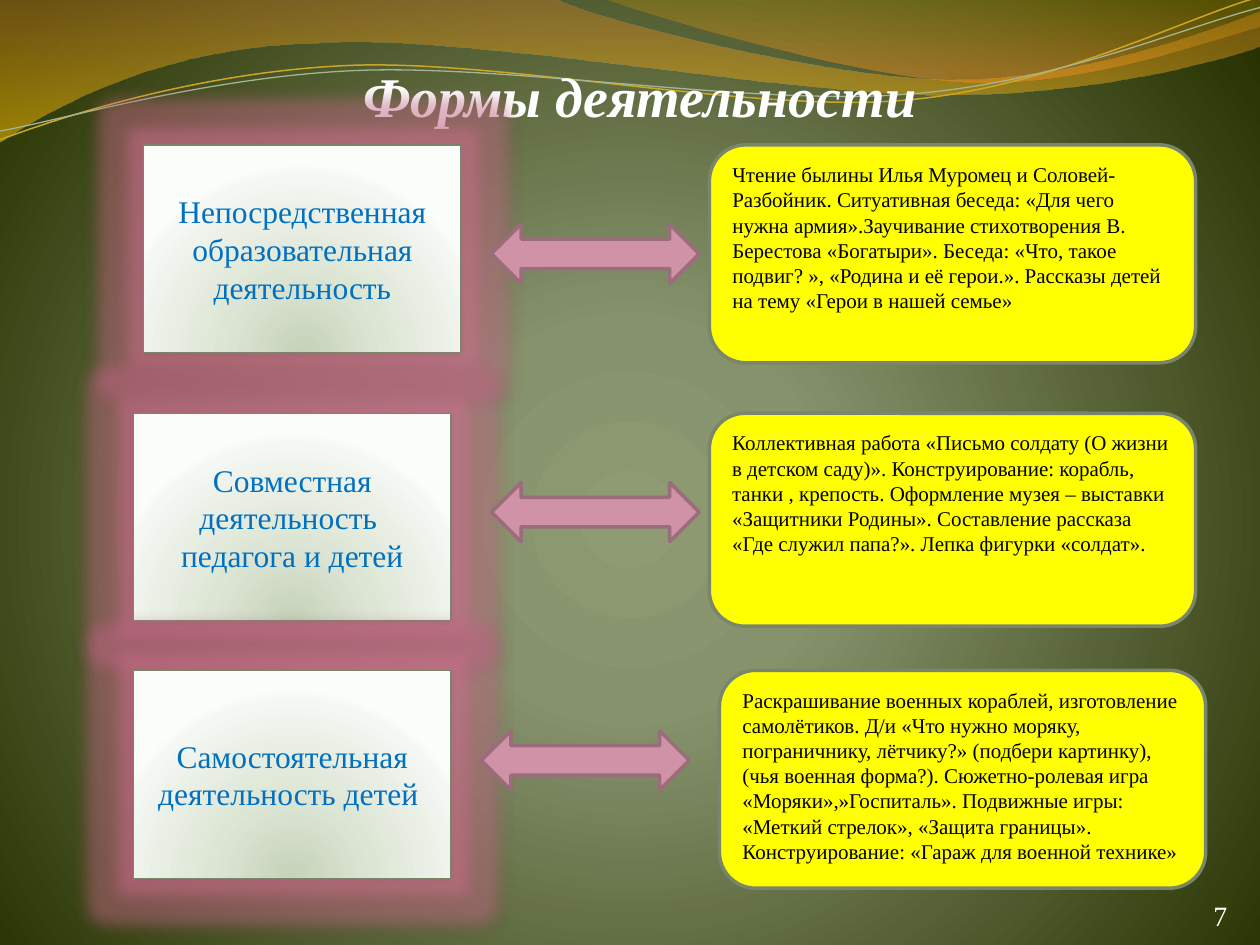
from lxml import etree
from pptx import Presentation
from pptx import util as u
from pptx.dml.color import RGBColor
from pptx.enum import shapes, text
from pptx.oxml import ns

Inches = u.Inches
HUES = {
    "white": "FFFFFF", "black": "000000", "blue": "0070C0",
    "yellow": "FFFF00", "edge": "7A866C", "pink": "D092A7",
    "plum": "9A6C7C", "glow": "E7799E", "gold": "CCA624", "sage": "A5B592",
}
FIELD = [(0, "8F9B72", 100), (25, "86926C", 100), (100, "273200", 100)]
PANEL = [(0, "C6D2B9", 100), (43, "DDE6D5", 100),
         (93, "F4F7F2", 100), (100, "FBFDFA", 100)]
WAVES = [
    ([("L", (0, 0)), ("L", (4.4, -0.01)),
      ("C", (4.76, 0.17), (6.64, 0.63), (7.58, 0.63)),
      ("C", (8.53, 0.63), (9.58, 0.26), (10, 0.09)),
      ("L", (10.01, 0.36)),
      ("C", (9.83, 0.44), (8.7, 0.76), (7.46, 0.75)),
      ("C", (6.22, 0.75), (3.82, 0.28), (2.57, 0.34)),
      ("C", (1.29, 0.36), (0.46, 0.83), (-0.01, 1.13)),
      ("L", (0, 0))],
     [(0, "C07A28", 45), (100, "F7BF00", 55)]),
    ([("L", (4.79, -0.01)),
      ("C", (5.09, 0.11), (6.82, 0.62), (7.69, 0.65)),
      ("C", (8.56, 0.69), (9.61, 0.32), (10, 0.21)),
      ("L", (10, 0)), ("L", (4.79, -0.01))],
     [(0, "C09709", 30), (80, "F59320", 45)]),
]
LINES = [
    ([("L", (0, 1.11)),
      ("C", (0.48, 0.93), (1.58, 0.57), (2.77, 0.52)),
      ("C", (3.95, 0.47), (5.93, 0.89), (7.13, 0.8)),
      ("C", (8.33, 0.71), (9.38, 0.15), (9.98, -0.02))], "gold", 0.85),
    ([("L", (0, 1.04)),
      ("C", (0.47, 0.96), (1.64, 0.61), (2.83, 0.56)),
      ("C", (4.03, 0.51), (5.97, 0.84), (7.17, 0.75)),
      ("C", (8.36, 0.67), (9.41, 0.21), (10, 0.06))], "sage", 0.75),
]
ROWS = [
    ((1.14, 1.15), "Непосредственная образовательная деятельность",
     (5.63, 1.15, 3.86, 1.73),
     "Чтение былины Илья Муромец и Соловей-Разбойник. Ситуативная беседа: "
     "«Для чего нужна армия».Заучивание стихотворения В. Берестова «Богатыри». "
     "Беседа: «Что, такое подвиг? », «Родина и её герои.». "
     "Рассказы детей на тему «Герои в нашей семье»", (3.9, 1.78)),
    ((1.06, 3.28), "Совместная деятельность  педагога и детей",
     (5.63, 3.28, 3.86, 1.69),
     "Коллективная работа «Письмо солдату (О жизни в детском саду)». "
     "Конструирование: корабль, танки , крепость. Оформление музея – выставки "
     "«Защитники Родины». Составление рассказа «Где служил папа?». "
     "Лепка фигурки «солдат».", (3.9, 3.83)),
    ((1.06, 5.32), "Самостоятельная деятельность детей ",
     (5.71, 5.32, 3.86, 1.73),
     "Раскрашивание военных кораблей, изготовление самолётиков. "
     "Д/и «Что нужно моряку, пограничнику, лётчику?» (подбери картинку), "
     "(чья военная форма?). Сюжетно-ролевая игра «Моряки»,»Госпиталь». "
     "Подвижные игры: «Меткий стрелок», «Защита границы». "
     "Конструирование: «Гараж для военной технике»", (3.82, 5.8)),
]


def rgb(name):
    return RGBColor.from_string(HUES[name])


def add_node(base, tag, **attrs):
    node = etree.SubElement(base, ns.qn("a:" + tag))
    for key, val in attrs.items():
        node.set(key, str(val))
    return node


def tint(base, hue, alpha):
    add_node(add_node(base, "srgbClr", val=hue), "alpha", val=alpha * 1000)


def blend(base, fill, stops, focus=None):
    fill.solid()
    old = base.find(ns.qn("a:solidFill"))
    grad = etree.Element(ns.qn("a:gradFill"), rotWithShape="1")
    items = add_node(grad, "gsLst")
    for pos, hue, alpha in stops:
        tint(add_node(items, "gs", pos=pos * 1000), hue, alpha)
    if focus:
        spot = add_node(grad, "path", path="circle")
        add_node(spot, "fillToRect",
                 **{side: val * 1000 for side, val in zip("ltrb", focus)})
    else:
        add_node(grad, "lin", ang=5400000, scaled=1)
    base.replace(old, grad)


def outline(slide, parts, close=False):
    spots = [(Inches(x), Inches(y)) for _, *pts in parts for x, y in pts]
    pen = slide.shapes.build_freeform(*spots[0], scale=1.0)
    pen.add_line_segments(spots[1:], close=close)
    shape = pen.convert_to_shape()
    shape.shadow.inherit = False
    legs = iter(list(shape._element.iter(ns.qn("a:lnTo"))))
    for kind, *_ in parts[1:]:
        leg = next(legs)
        if kind == "C":
            leg.tag = ns.qn("a:cubicBezTo")
            for _ in range(2):
                rest = next(legs)
                leg.append(rest[0])
                rest.getparent().remove(rest)
    return shape


def write(shape, words, size=12, hue="black", bold=False, slant=False,
          align="LEFT", anchor="TOP"):
    frame = shape.text_frame
    frame.word_wrap = True
    frame.vertical_anchor = getattr(text.MSO_ANCHOR, anchor)
    para = frame.paragraphs[0]
    para.alignment = getattr(text.PP_ALIGN, align)
    run = para.add_run()
    run.text = words
    font = run.font
    font.name, font.size = "Times New Roman", u.Pt(size)
    font.bold, font.italic = bold, slant
    font.color.rgb = rgb(hue)


def add_form(slide, kind, box, fill, line, width):
    shape = slide.shapes.add_shape(kind, *map(Inches, box))
    shape.shadow.inherit = False
    if fill:
        shape.fill.solid()
        shape.fill.fore_color.rgb = rgb(fill)
    shape.line.color.rgb = rgb(line)
    shape.line.width = u.Pt(width)
    return shape


def add_label(slide, box, words):
    shape = add_form(slide, shapes.MSO_SHAPE.RECTANGLE, box, None, "edge", 0.75)
    props = shape._element.spPr
    blend(props, shape.fill, PANEL, (50, 130, 50, -30))
    fx = props.find(ns.qn("a:effectLst"))
    tint(add_node(fx, "glow", rad=Inches(0.25)), HUES["glow"], 40)
    tint(add_node(fx, "outerShdw", blurRad=u.Pt(3.1), dist=u.Pt(1.6),
                  dir=5400000, rotWithShape=0), HUES["black"], 38)
    write(shape, words, size=18, hue="blue", align="CENTER", anchor="MIDDLE")


def add_note(slide, box, words):
    kind = shapes.MSO_SHAPE.ROUNDED_RECTANGLE
    write(add_form(slide, kind, box, "yellow", "edge", 2), words)


def add_arrow(slide, box):
    kind = shapes.MSO_SHAPE.LEFT_RIGHT_ARROW
    add_form(slide, kind, box, "pink", "plum", 2)


def add_scene(slide):
    fill = slide.background.fill
    fill.solid()
    base = next(slide._element.iter(ns.qn("p:bgPr")))
    blend(base, fill, FIELD, (10, 110, 10, 100))
    for parts, stops in WAVES:
        wave = outline(slide, parts, True)
        blend(wave._element.spPr, wave.fill, stops)
        wave.line.fill.background()
    for parts, hue, width in LINES:
        curve = outline(slide, parts)
        curve.fill.background()
        curve.line.color.rgb = rgb(hue)
        curve.line.width = u.Pt(width)


def add_words(slide, box, words, **style):
    label = slide.shapes.add_textbox(*map(Inches, box))
    write(label, words, hue="white", align="CENTER", **style)
    return label.text_frame


def main():
    deck = Presentation()
    deck.slide_width, deck.slide_height = Inches(10), Inches(7.5)
    slide = deck.slides.add_slide(deck.slide_layouts[6])
    add_scene(slide)
    title = add_words(slide, (0.83, 0.44, 8.59, 0.71), "Формы деятельности",
                      size=32, bold=True, slant=True)
    title.margin_left, title.margin_right = 0, Inches(0.09)
    for spot, name, *_ in ROWS:
        add_label(slide, (*spot, 2.52, 1.65), name)
    for _, _, box, words, _ in ROWS:
        add_note(slide, box, words)
    for *_, spot in ROWS:
        add_arrow(slide, (*spot, 1.65, 0.47))
    add_words(slide, (9.41, 7.08, 0.55, 0.37), "7", size=16)
    deck.save("out.pptx")


if __name__ == "__main__":
    main()
